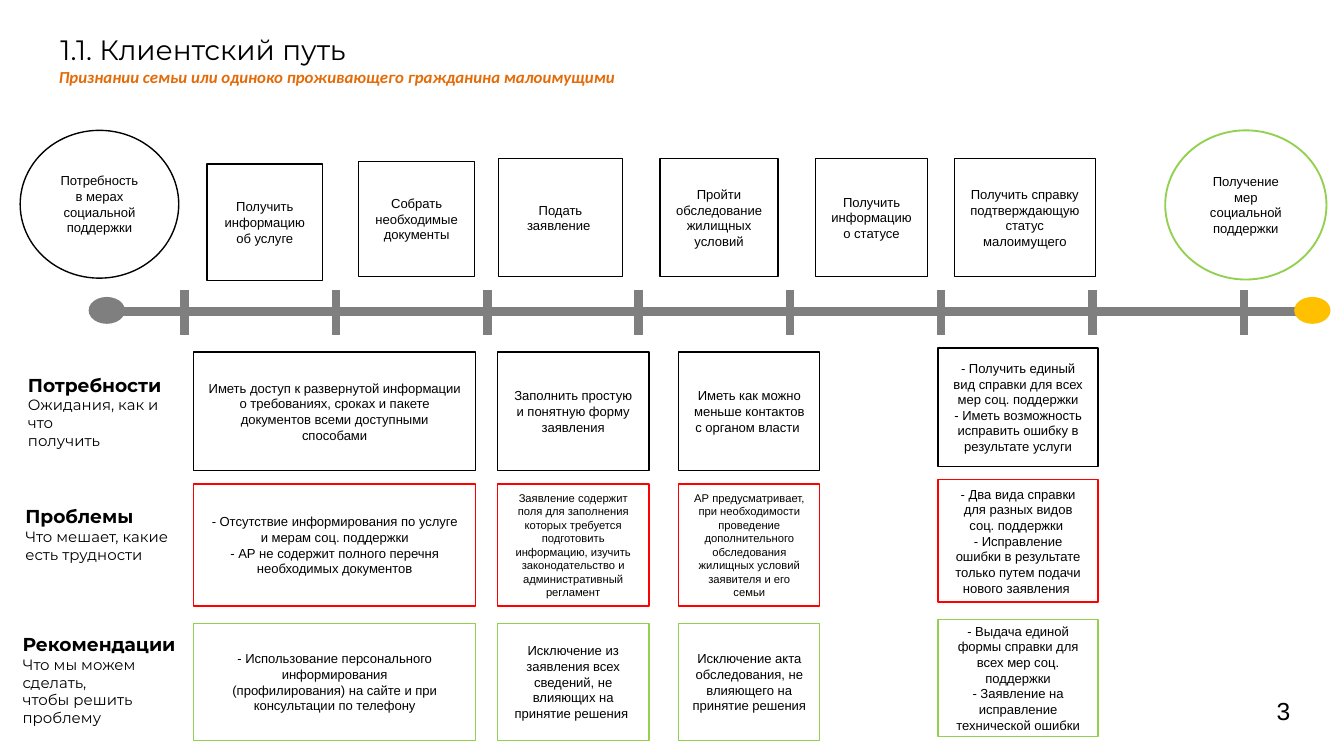
from copy import deepcopy
from dataclasses import dataclass

from lxml.etree import SubElement
from pptx import Presentation
from pptx.dml.color import RGBColor
from pptx.enum.shapes import MSO_CONNECTOR, MSO_SHAPE
from pptx.enum.text import MSO_ANCHOR, MSO_AUTO_SIZE, PP_ALIGN
from pptx.oxml.ns import qn
from pptx.util import Inches, Pt


@dataclass(frozen=True)
class Theme:
    """Colours, fonts and type sizes of the slide."""
    black: str = "000000"
    white: str = "FFFFFF"
    grey: str = "7F7F7F"
    amber: str = "FFC000"
    red: str = "FF0000"
    green: str = "92D050"
    orange: str = "E36C09"
    body_font: str = "Arial"
    heading_font: str = "Montserrat"
    accent_font: str = "Calibri"
    title_size: float = 15
    number_size: float = 13.2
    heading_size: float = 10
    subtitle_size: float = 9
    caption_size: float = 8
    body_size: float = 7
    small_size: float = 6


def write(frame, text, font, size, color, bold=False, italic=False,
          align=PP_ALIGN.LEFT):
    """Append formatted text, with a paragraph per newline and a line break per \\v."""
    for block in text.split("\n"):
        paragraph = frame.paragraphs[0] if not frame.text else frame.add_paragraph()
        paragraph.alignment = align
        for index, line in enumerate(block.split("\v")):
            if index:
                paragraph.add_line_break()
                paragraph._p[-1].append(deepcopy(run.font._rPr))
            run = paragraph.add_run()
            run.text = line
            run.font.name = font
            run.font.size = Pt(size)
            run.font.bold = bold
            run.font.italic = italic
            run.font.color.rgb = RGBColor.from_string(color)


def lay_out(frame, inset_x=0.1, inset_y=0.05, anchor=MSO_ANCHOR.TOP):
    """Set wrapping, insets and anchor of a text frame."""
    frame.word_wrap = True
    frame.auto_size = MSO_AUTO_SIZE.NONE
    frame.margin_left = frame.margin_right = Inches(inset_x)
    frame.margin_top = frame.margin_bottom = Inches(inset_y)
    frame.vertical_anchor = anchor


class JourneySlide:
    """Draws the parts of a customer journey in one style."""

    def __init__(self, slide, theme):
        self.slide = slide
        self.theme = theme

    def title(self, text, left, top, width, height):
        """Place and format the title placeholder."""
        heading = self.slide.shapes.title
        heading.left, heading.top = Inches(left), Inches(top)
        heading.width, heading.height = Inches(width), Inches(height)
        lay_out(heading.text_frame, 0, 0)
        write(heading.text_frame, text, self.theme.heading_font,
              self.theme.title_size, self.theme.black)

    def text_area(self, left, top, width, height, **layout):
        """Add an empty text box and return its frame."""
        area = self.slide.shapes.add_textbox(
            Inches(left), Inches(top), Inches(width), Inches(height))
        lay_out(area.text_frame, **layout)
        return area.text_frame

    def row_label(self, heading, caption, left, top, width, height):
        """Add a bold row heading with its caption."""
        theme = self.theme
        frame = self.text_area(left, top, width, height)
        write(frame, heading, theme.heading_font, theme.heading_size,
              theme.black, bold=True)
        write(frame, caption, theme.heading_font, theme.caption_size, theme.black)

    def solid(self, shapes, preset, left, top, width, height, fill):
        """Add a filled shape without outline or shadow."""
        shape = shapes.add_shape(
            preset, Inches(left), Inches(top), Inches(width), Inches(height))
        shape.shadow.inherit = False
        shape.fill.solid()
        shape.fill.fore_color.rgb = RGBColor.from_string(fill)
        shape.line.fill.background()
        return shape

    def card(self, text, left, top, width, height, outline,
             preset=MSO_SHAPE.RECTANGLE, size=None, weight=0.75):
        """Add an outlined white shape with centred text."""
        theme = self.theme
        card = self.solid(self.slide.shapes, preset, left, top, width, height,
                          theme.white)
        card.line.color.rgb = RGBColor.from_string(outline)
        card.line.width = Pt(weight)
        lay_out(card.text_frame, anchor=MSO_ANCHOR.MIDDLE)
        write(card.text_frame, text, theme.body_font, size or theme.body_size,
              theme.black, align=PP_ALIGN.CENTER)

    def timeline(self, ticks):
        """Add the grouped axis with its end points and evenly spaced ticks."""
        theme = self.theme
        parts = self.slide.shapes.add_group_shape().shapes
        axis = parts.add_connector(MSO_CONNECTOR.STRAIGHT, Inches(0.76),
                                   Inches(2.32), Inches(9.7), Inches(2.32))
        axis.line.color.rgb = RGBColor.from_string(theme.grey)
        axis.line.width = Pt(4.75)
        SubElement(axis._element.spPr, qn("a:effectLst"))
        for left, color in ((0.66, theme.grey), (9.63, theme.amber)):
            self.solid(parts, MSO_SHAPE.OVAL, left, 2.21, 0.27, 0.2, color)
        first, last = 1.15, 9.03
        gap = (last - first) / (ticks - 1)
        for index in range(ticks):
            tick = self.solid(parts, MSO_SHAPE.MATH_MINUS, first + index * gap,
                              2.19, 0.45, 0.27, theme.grey)
            tick.adjustments[0] = 0.235
            tick.rotation = 270


def main():
    """Build and save the customer journey slide."""
    theme = Theme()
    deck = Presentation()
    deck.slide_width = Inches(10)
    deck.slide_height = deck.slide_width * 9 // 16
    journey = JourneySlide(deck.slides.add_slide(deck.slide_layouts[5]), theme)

    journey.title("1.1. Клиентский путь", 0.45, 0.24, 7, 0.29)
    write(journey.text_area(0.34, 0.45, 7.83, 0.25),
          "Признании семьи или одиноко проживающего гражданина малоимущими",
          theme.accent_font, theme.subtitle_size, theme.orange, bold=True, italic=True)
    page_number = journey.text_area(9.5, 5.14, 0.47, 0.3, inset_x=0, inset_y=0,
                                    anchor=MSO_ANCHOR.MIDDLE)
    write(page_number, "3", theme.body_font, theme.number_size, theme.black)

    journey.timeline(ticks=8)
    journey.card("Потребность в мерах социальной поддержки",
                 0.15, 0.97, 1.18, 1.1, theme.black, MSO_SHAPE.OVAL)
    journey.card("Получение мер социальной поддержки",
                 8.67, 0.97, 1.2, 1.11, theme.green, MSO_SHAPE.OVAL, weight=1)

    steps = (
        ("Получить информацию об услуге", 1.54, 1.22, 0.86, 0.87),
        ("Собрать необходимые документы", 2.67, 1.2, 0.86, 0.86),
        ("Подать заявление ", 3.71, 1.18, 0.92, 0.88),
        ("Пройти обследование жилищных условий", 4.91, 1.18, 0.88, 0.88),
        ("Получить информацию о статусе", 6.07, 1.18, 0.83, 0.88),
        ("Получить справку подтверждающую статус малоимущего", 7.1, 1.18, 1.05, 0.88),
    )
    for step in steps:
        journey.card(*step, theme.black)

    columns = ((1.44, 2.1, 0), (3.7, 1.13, 0), (5.05, 1.05, 0), (6.98, 1.19, 0.03))
    body, small = theme.body_size, theme.small_size
    rows = (
        ("Потребности", "Ожидания, как и что\nполучить", (0.11, 2.73, 1.27, 0.67),
         2.62, 0.88, theme.black, (body, body, body, body), (
            "Иметь доступ к развернутой информации о требованиях, сроках и пакете документов всеми доступными способами",
            "Заполнить простую и понятную форму заявления",
            "Иметь как можно меньше контактов с органом власти ",
            "- Получить единый вид справки для всех мер соц. поддержки\v- Иметь возможность исправить ошибку в результате услуги")),
        ("Проблемы", "Что мешает, какие\nесть трудности", (0.09, 3.71, 1.27, 0.67),
         3.6, 0.91, theme.red, (body, small, small, body), (
            "- Отсутствие информирования по услуге и мерам соц. поддержки\n- АР не содержит полного перечня необходимых документов",
            "Заявление содержит поля для заполнения которых требуется подготовить информацию, изучить законодательство и административный регламент",
            "АР предусматривает, при необходимости проведение дополнительного обследования жилищных условий заявителя и его семьи",
            "- Два вида справки для разных видов соц. поддержки \v- Исправление ошибки в результате только путем подачи нового заявления ")),
        ("Рекомендации", "Что мы можем сделать,\nчтобы решить проблему", (0.07, 4.66, 1.37, 0.81),
         4.64, 0.87, theme.green, (body, body, body, body), (
            "- Использование персонального информирования\v(профилирования) на сайте и при консультации по телефону",
            "Исключение из заявления всех сведений, не влияющих на принятие решения ",
            "Исключение акта обследования, не влияющего на принятие решения",
            "- Выдача единой формы справки для всех мер соц. поддержки\v- Заявление на исправление технической ошибки")),
    )
    for heading, caption, label_place, top, height, outline, sizes, notes in rows:
        journey.row_label(heading, caption, *label_place)
        for (left, width, rise), size, note in zip(columns, sizes, notes):
            journey.card(note, left, top - rise, width, height, outline, size=size)

    deck.save("out.pptx")


if __name__ == "__main__":
    main()
